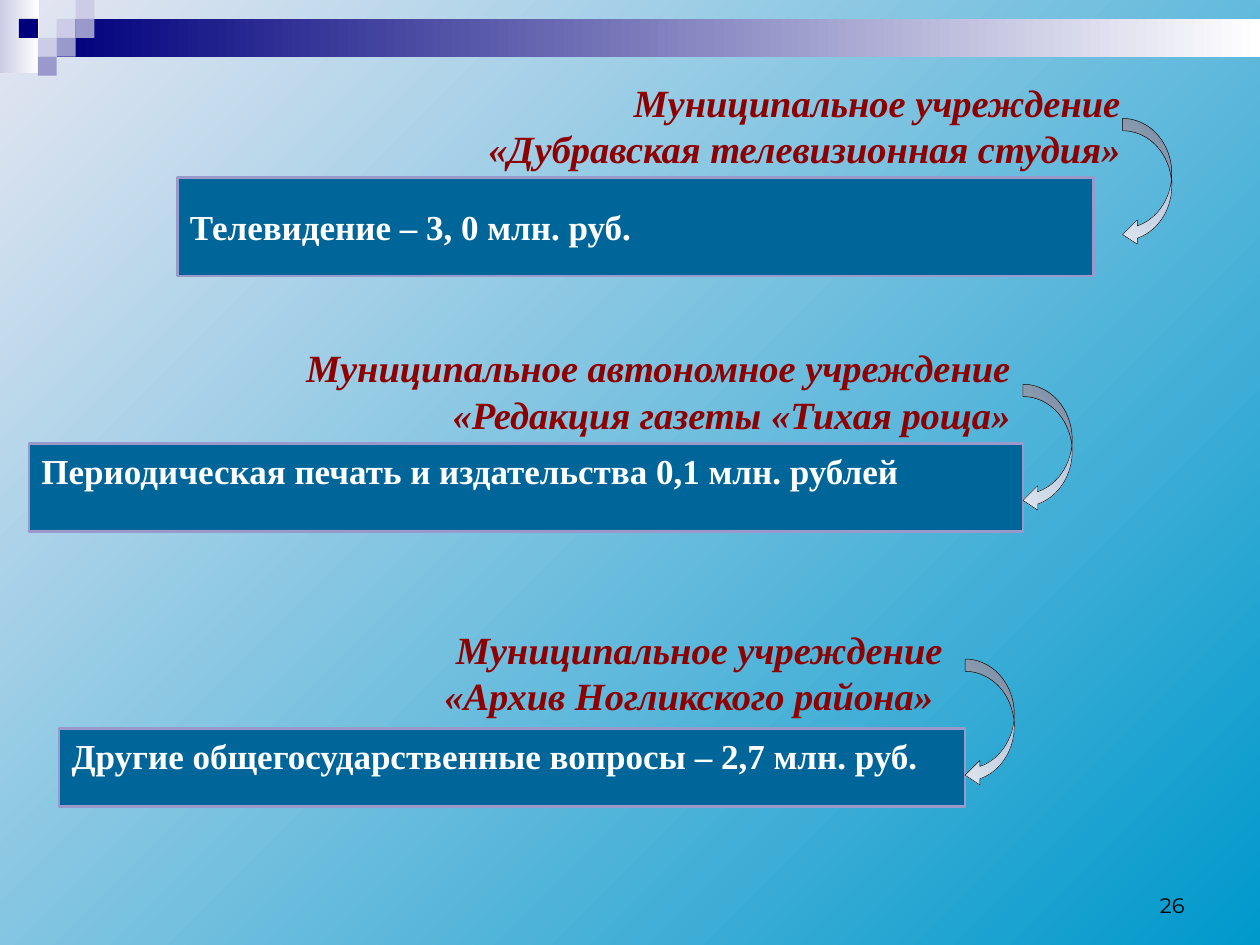
from copy import deepcopy
from dataclasses import dataclass

from pptx import Presentation
from pptx.dml.color import RGBColor
from pptx.enum.shapes import MSO_SHAPE
from pptx.enum.text import MSO_ANCHOR, MSO_AUTO_SIZE, PP_ALIGN
from pptx.oxml.ns import qn
from pptx.util import Pt

RECTANGLE, CURVED_ARROW = MSO_SHAPE.RECTANGLE, MSO_SHAPE.CURVED_RIGHT_ARROW
TOP, MIDDLE, BOTTOM = MSO_ANCHOR.TOP, MSO_ANCHOR.MIDDLE, MSO_ANCHOR.BOTTOM
LEFT, RIGHT = PP_ALIGN.LEFT, PP_ALIGN.RIGHT
NO_AUTOFIT = MSO_AUTO_SIZE.NONE
TITLE_ONLY = 5


@dataclass(frozen=True)
class Theme:
    serif: str = "Times New Roman"
    sans: str = "Montserrat"
    heading_size: int = 22
    box_size: int = 20
    number_size: int = 12
    heading: str = "8E0000"
    box: str = "006699"
    box_text: str = "FFFFFF"
    black: str = "000000"
    navy: str = "00007D"
    violet: str = "9999CC"
    lilac: str = "CCCCE6"
    # Gradients: (position, colour) stops
    background: tuple = ((0, "0099CC"), (1, "E6E6F2"))
    corner: tuple = ((0, "CCCCE6"), (1, "FFFFFF"))
    banner: tuple = ((0, "00007D"), (1, "FFFFFF"))
    arrow: tuple = ((0, "92AECF"), (0.5, "BECDE0"), (1, "E0E6EF"))


THEME = Theme()

# Areas are left, top, width, height in points
SECTIONS = [
    {"heading": ["Муниципальное учреждение", "«Дубравская телевизионная студия»"],
     "heading_area": (101.5, 39.6, 545.8, 63.4), "heading_anchor": MIDDLE,
     "text": "Телевидение – 3, 0 млн. руб.",
     "box_area": (101.5, 101.5, 523.4, 56.2), "box_anchor": MIDDLE,
     "arrow_at": (641.5, 67.7), "is_title": False},
    {"heading": ["Муниципальное автономное учреждение", "«Редакция газеты «Тихая роща»"],
     "heading_area": (84.2, 191.5, 500.4, 63.4), "heading_anchor": MIDDLE,
     "text": "Периодическая печать и издательства 0,1 млн. рублей",
     "box_area": (16.6, 253.4, 568.1, 50.4), "box_anchor": TOP,
     "arrow_at": (584.6, 219.6), "is_title": True},
    {"heading": ["Муниципальное учреждение", "«Архив Ногликского района» "],
     "heading_area": (112.3, 354.2, 433.4, 60.5), "heading_anchor": TOP,
     "text": "Другие общегосударственные вопросы – 2,7 млн. руб.",
     "box_area": (33.8, 416.2, 517.7, 44.6), "box_anchor": TOP,
     "arrow_at": (551.5, 376.6), "is_title": False},
]
ARROW_SIZE = (28.1, 73.4)
ARROW_ADJUSTMENTS = (0.25, 0.5, 0.3)

PAGE_NUMBER = "26"
NUMBER_AREA = (516.2, 491.8, 167.8, 36)

CORNER_AREA = (0, 0, 22.3, 41.8)
BANNER_AREA = (32.4, 10.8, 687.6, 21.6)
SQUARE = 10.8
SQUARES = [  # column, row, colour
    (3, 1, THEME.lilac), (4, 0, THEME.lilac), (4, 1, THEME.violet),
    (2, 2, THEME.lilac), (1, 1, THEME.navy), (3, 2, THEME.violet),
    (2, 3, THEME.violet),
]


def color(value):
    return RGBColor.from_string(value)


def points(values):
    return [Pt(value) for value in values]


def paint_gradient(fill, element, stops, angle):
    """Fill with any number of stops; the angle runs counter-clockwise."""
    fill.gradient()
    fill.gradient_angle = angle
    stop_list = next(element.iter(qn("a:gsLst")))
    while len(stop_list) < len(stops):
        stop_list.insert(0, deepcopy(stop_list[0]))
    for stop, (position, value) in zip(fill.gradient_stops, stops):
        stop.position = position
        stop.color.rgb = color(value)


def add_shape(slide, kind, area, paint, line=None, line_width=0, angle=0):
    """Add a shape painted with a colour or a tuple of gradient stops."""
    shape = slide.shapes.add_shape(kind, *points(area))
    shape.shadow.inherit = False
    if isinstance(paint, str):
        shape.fill.solid()
        shape.fill.fore_color.rgb = color(paint)
    else:
        paint_gradient(shape.fill, shape._element, paint, angle)
    if line:
        shape.line.color.rgb = color(line)
        shape.line.width = Pt(line_width)
    else:
        shape.line.fill.background()
    return shape


def write(shape, lines, size, value, font_name, anchor, alignment, bold=False, italic=False):
    frame = shape.text_frame
    frame.word_wrap = True
    frame.auto_size = NO_AUTOFIT
    frame.vertical_anchor = anchor
    paragraph = frame.paragraphs[0]
    paragraph.alignment = alignment
    for index, line in enumerate(lines):
        if index:
            paragraph.add_line_break()
        run = paragraph.add_run()
        run.text = line
        run.font.name = font_name
        run.font.size = Pt(size)
        run.font.bold = bold
        run.font.italic = italic
        run.font.color.rgb = color(value)


def add_decoration(slide):
    add_shape(slide, RECTANGLE, CORNER_AREA, THEME.corner)
    add_shape(slide, RECTANGLE, BANNER_AREA, THEME.banner)
    for column, row, value in SQUARES:
        add_shape(slide, RECTANGLE, (column * SQUARE, row * SQUARE, SQUARE, SQUARE), value)


def add_section(slide, section):
    box = add_shape(slide, RECTANGLE, section["box_area"], THEME.box, THEME.violet, 1.5)
    write(box, [section["text"]], THEME.box_size, THEME.box_text, THEME.serif,
          section["box_anchor"], LEFT, bold=True)

    area = points(section["heading_area"])
    if section["is_title"]:
        heading = slide.shapes.title
        heading.left, heading.top, heading.width, heading.height = area
    else:
        heading = slide.shapes.add_textbox(*area)
    write(heading, section["heading"], THEME.heading_size, THEME.heading, THEME.serif,
          section["heading_anchor"], RIGHT, bold=True, italic=True)

    arrow = add_shape(slide, CURVED_ARROW, section["arrow_at"] + ARROW_SIZE,
                      THEME.arrow, THEME.black, 0.25, angle=315)
    for index, adjustment in enumerate(ARROW_ADJUSTMENTS):
        arrow.adjustments[index] = adjustment
    arrow._element.spPr.xfrm.set("flipH", "1")


def main():
    presentation = Presentation()
    presentation.slide_width, presentation.slide_height = Pt(720), Pt(540)
    slide = presentation.slides.add_slide(presentation.slide_layouts[TITLE_ONLY])
    paint_gradient(slide.background.fill, slide._element, THEME.background, 135)
    add_decoration(slide)
    for section in SECTIONS:
        add_section(slide, section)
    number = slide.shapes.add_textbox(*points(NUMBER_AREA))
    write(number, [PAGE_NUMBER], THEME.number_size, THEME.black, THEME.sans, BOTTOM, RIGHT)
    presentation.save("out.pptx")


if __name__ == "__main__":
    main()
